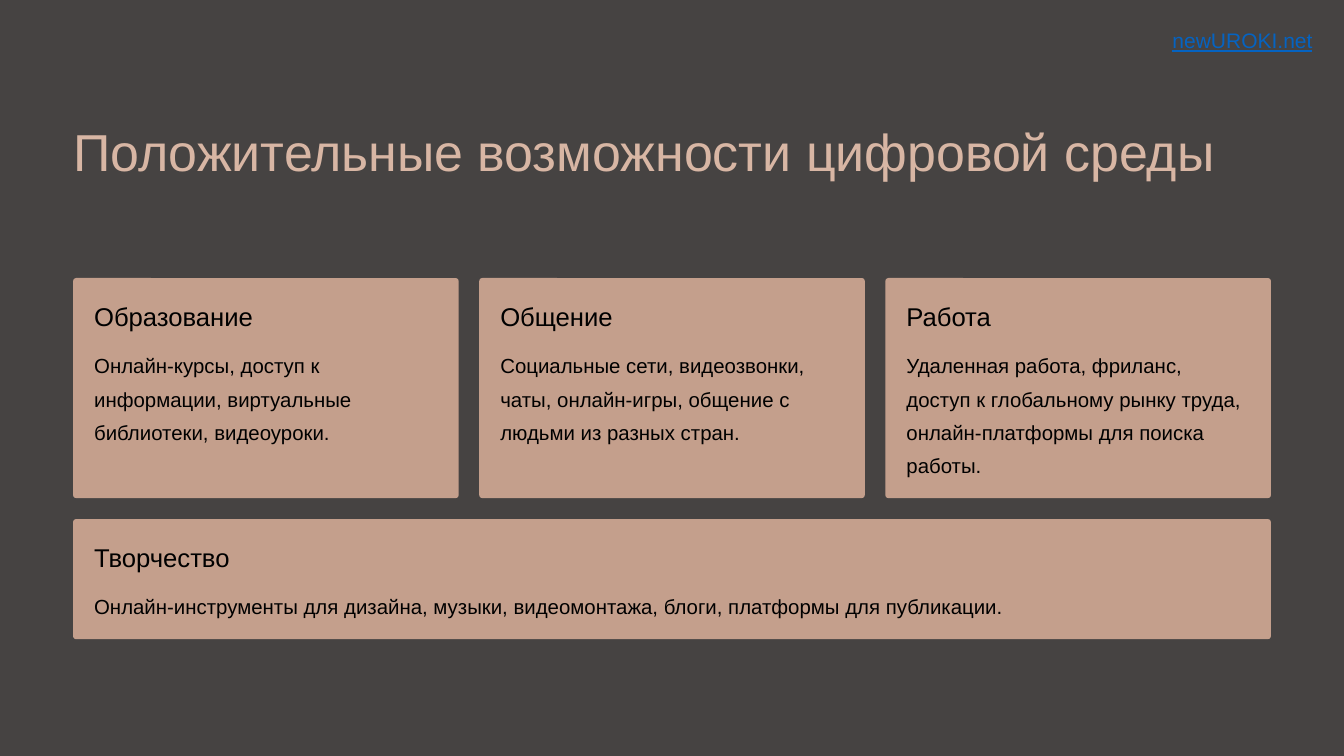
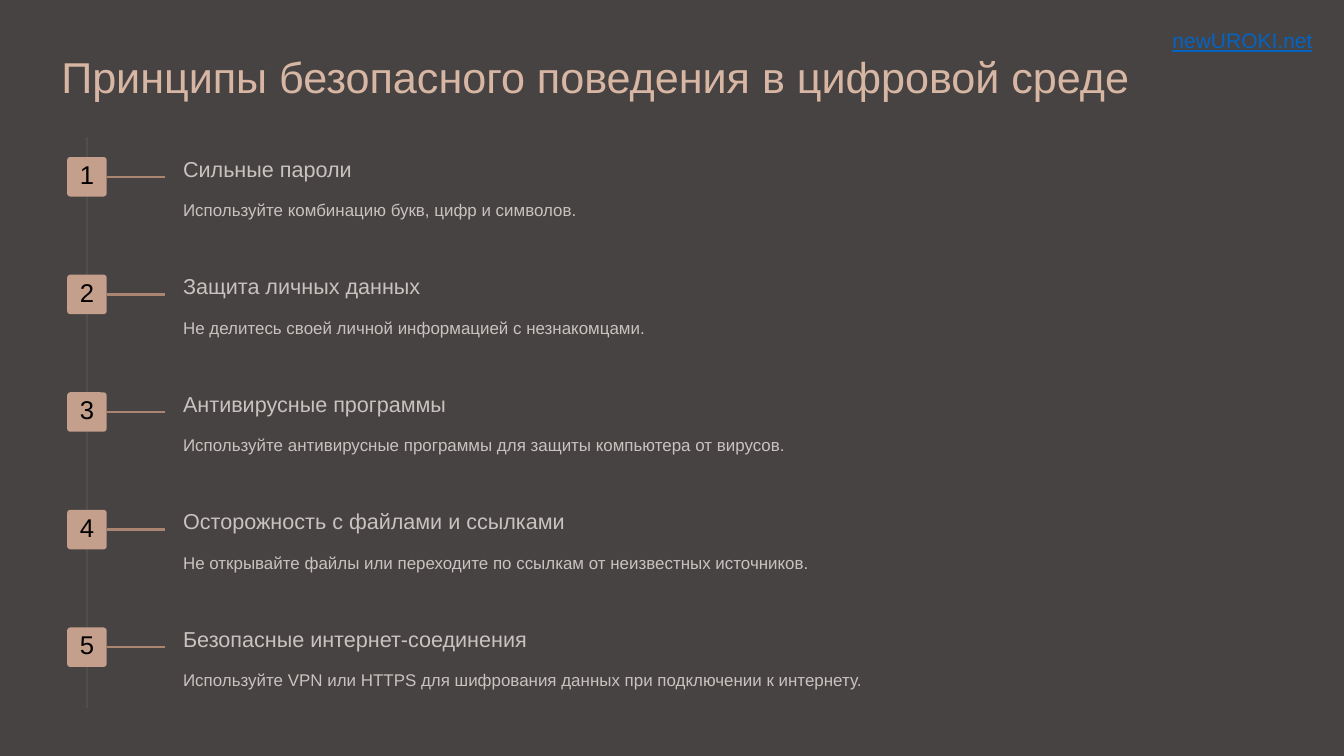
from dataclasses import dataclass

from lxml import etree
from pptx import Presentation
from pptx.dml.color import RGBColor
from pptx.enum.shapes import MSO_CONNECTOR, MSO_SHAPE
from pptx.enum.text import MSO_ANCHOR, PP_ALIGN
from pptx.oxml.ns import qn
from pptx.util import Inches, Pt

ROUNDED = MSO_SHAPE.ROUNDED_RECTANGLE
STRAIGHT = MSO_CONNECTOR.STRAIGHT
TOP, MIDDLE = MSO_ANCHOR.TOP, MSO_ANCHOR.MIDDLE
LEFT, CENTER = PP_ALIGN.LEFT, PP_ALIGN.CENTER


@dataclass(frozen=True)
class Style:
    size: float
    color: str
    leading: float | None = None
    before: float = 0
    underline: bool = False


@dataclass(frozen=True)
class Theme:
    font: str = "Arial"
    background: str = "464342"
    panel: str = "C49F8C"
    spine: str = "504D4C"
    tick: str = "AA8572"
    line_width: float = 2.16
    radius: float = 0.037
    title: Style = Style(44.5, "D8B6A4", 55.5)
    compact_title: Style = Style(37, "D8B6A4", 46.5)
    card_heading: Style = Style(22, "000000", 27.5)
    card_body: Style = Style(17.5, "000000", 28.5, before=11.5)
    number: Style = Style(22, "000000", 22)
    rule_heading: Style = Style(18.5, "C9C2C0", 23)
    rule_body: Style = Style(14.5, "C9C2C0", 23.5, before=9.4)
    site: Style = Style(18, "0563C1", underline=True)


THEME = Theme()


def write(shape, lines, inset=0, wrap=True, anchor=TOP, align=LEFT):
    frame = shape.text_frame
    frame.word_wrap = wrap
    frame.vertical_anchor = anchor
    frame.margin_left = frame.margin_right = Inches(inset)
    frame.margin_top = frame.margin_bottom = Inches(inset)
    frame.text = "\n".join(text for text, style in lines)
    for para, (text, style) in zip(frame.paragraphs, lines):
        para.alignment = align
        if style.leading:
            para.line_spacing = Pt(style.leading)
        if style.before:
            para.space_before = Pt(style.before)
        for span in para.runs:
            span.font.name = THEME.font
            span.font.size = Pt(style.size)
            span.font.color.rgb = RGBColor.from_string(style.color)
            if style.underline:
                span.font.underline = True


def add_panel(page, left, top, width, height):
    panel = page.shapes.add_shape(ROUNDED, Inches(left), Inches(top), Inches(width), Inches(height))
    panel.adjustments[0] = THEME.radius / min(width, height)
    panel.shadow.inherit = False
    panel.fill.solid()
    panel.fill.fore_color.rgb = RGBColor.from_string(THEME.panel)
    panel.line.fill.background()
    return panel


deck = Presentation()
deck.slide_width, deck.slide_height = Inches(16), Inches(9)
pages = []
for title, style, left, top, width, height in [
    ("Положительные возможности цифровой среды", THEME.title, 0.87, 1.39, 14.26, 1.55),
    ("Принципы безопасного поведения в цифровой среде", THEME.compact_title, 0.73, 0.57, 13.63, 0.65),
]:
    page = deck.slides.add_slide(deck.slide_layouts[6])
    page.background.fill.solid()
    page.background.fill.fore_color.rgb = RGBColor.from_string(THEME.background)
    title_box = page.shapes.add_textbox(Inches(left), Inches(top), Inches(width), Inches(height))
    write(title_box, [(title, style)])
    site_box = page.shapes.add_textbox(Inches(13.86), Inches(0.28), Inches(1.88), Inches(0.4))
    write(site_box, [("newUROKI.net", THEME.site)], inset=0.1, wrap=False)
    site_box.text_frame.margin_top = site_box.text_frame.margin_bottom = Inches(0.05)
    pages.append(page)
opportunities_page, rules_page = pages

grid_left, grid_top, gap = 0.87, 3.31, 0.25
full_width, card_width, card_height = 14.26, 4.59, 2.62
column_step = (full_width - card_width) / 2
cards = [
    ("Образование", "Онлайн-курсы, доступ к информации, виртуальные библиотеки, видеоуроки."),
    ("Общение", "Социальные сети, видеозвонки, чаты, онлайн-игры, общение с людьми из разных стран."),
    ("Работа", "Удаленная работа, фриланс, доступ к глобальному рынку труда, онлайн-платформы для поиска работы."),
    ("Творчество", "Онлайн-инструменты для дизайна, музыки, видеомонтажа, блоги, платформы для публикации."),
]
for index, (heading, body) in enumerate(cards):
    row, column = divmod(index, 3)
    card = add_panel(
        opportunities_page,
        grid_left + column * column_step,
        grid_top + row * (card_height + gap),
        full_width if row else card_width,
        1.43 if row else card_height,
    )
    write(card, [(heading, THEME.card_heading), (body, THEME.card_body)], inset=0.24)

badge_left, badge_size, first_top, row_step = 0.8, 0.47, 1.87, 1.4
spine_x = badge_left + badge_size / 2
tick_end = 1.97
spine = rules_page.shapes.add_connector(STRAIGHT, Inches(spine_x), Inches(1.63), Inches(spine_x), Inches(8.43))
lines = [(spine, THEME.spine)]
rules = [
    ("Сильные пароли", "Используйте комбинацию букв, цифр и символов."),
    ("Защита личных данных", "Не делитесь своей личной информацией с незнакомцами."),
    ("Антивирусные программы", "Используйте антивирусные программы для защиты компьютера от вирусов."),
    ("Осторожность с файлами и ссылками", "Не открывайте файлы или переходите по ссылкам от неизвестных источников."),
    ("Безопасные интернет-соединения", "Используйте VPN или HTTPS для шифрования данных при подключении к интернету."),
]
for index, (heading, body) in enumerate(rules):
    top = first_top + index * row_step
    middle = top + badge_size / 2
    badge = add_panel(rules_page, badge_left, top, badge_size, badge_size)
    write(badge, [(str(index + 1), THEME.number)], anchor=MIDDLE, align=CENTER)
    tick = rules_page.shapes.add_connector(
        STRAIGHT, Inches(badge_left + badge_size), Inches(middle), Inches(tick_end), Inches(middle)
    )
    tick.begin_connect(badge, 3)
    lines.append((tick, THEME.tick))
    rule_box = rules_page.shapes.add_textbox(Inches(2.18), Inches(top - 0.03), Inches(13.1), Inches(0.78))
    write(rule_box, [(heading, THEME.rule_heading), (body, THEME.rule_body)])

for line, color in lines:
    line.line.width = Pt(THEME.line_width)
    line.line.color.rgb = RGBColor.from_string(color)
    etree.SubElement(line._element.spPr, qn("a:effectLst"))

deck.save("out.pptx")
